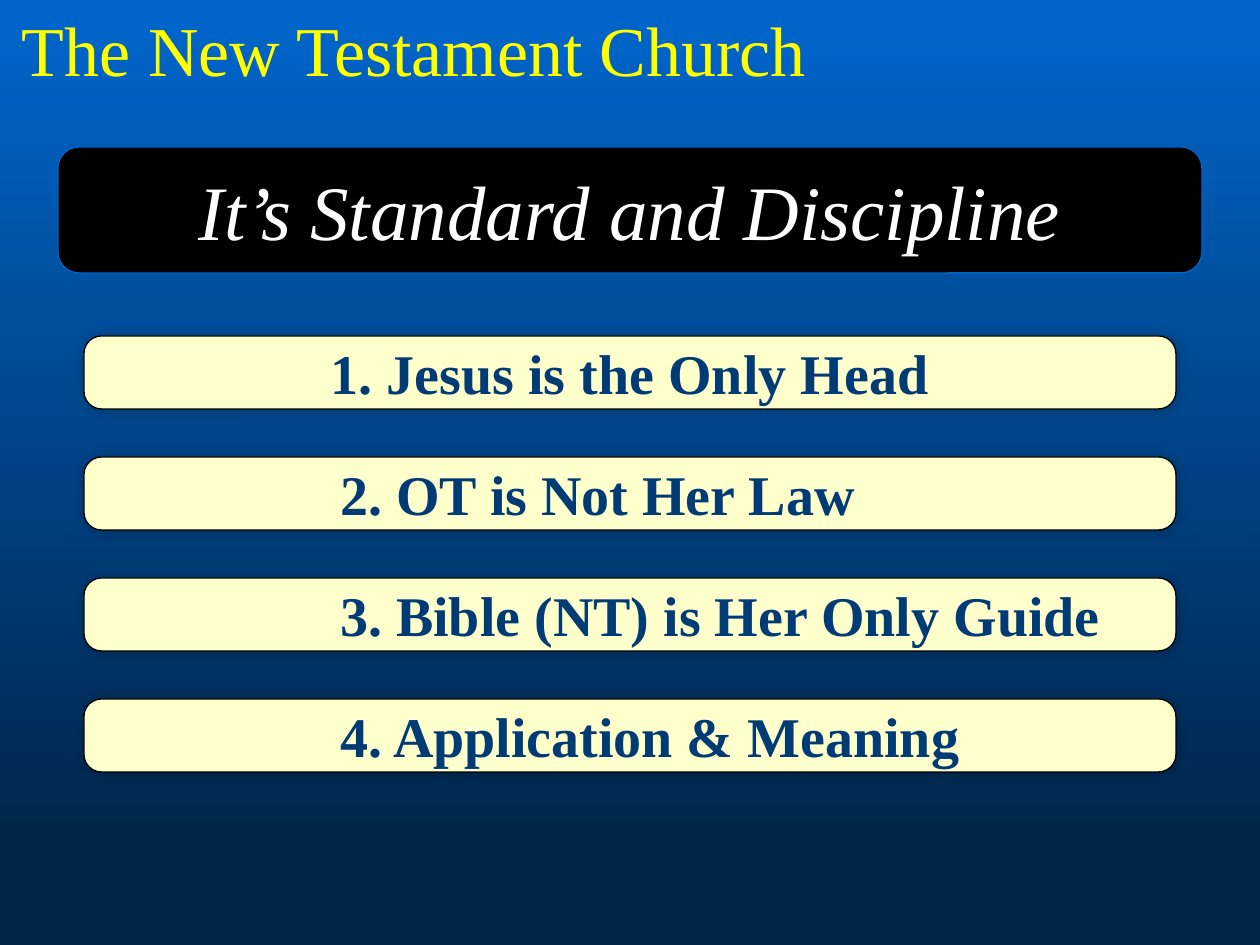
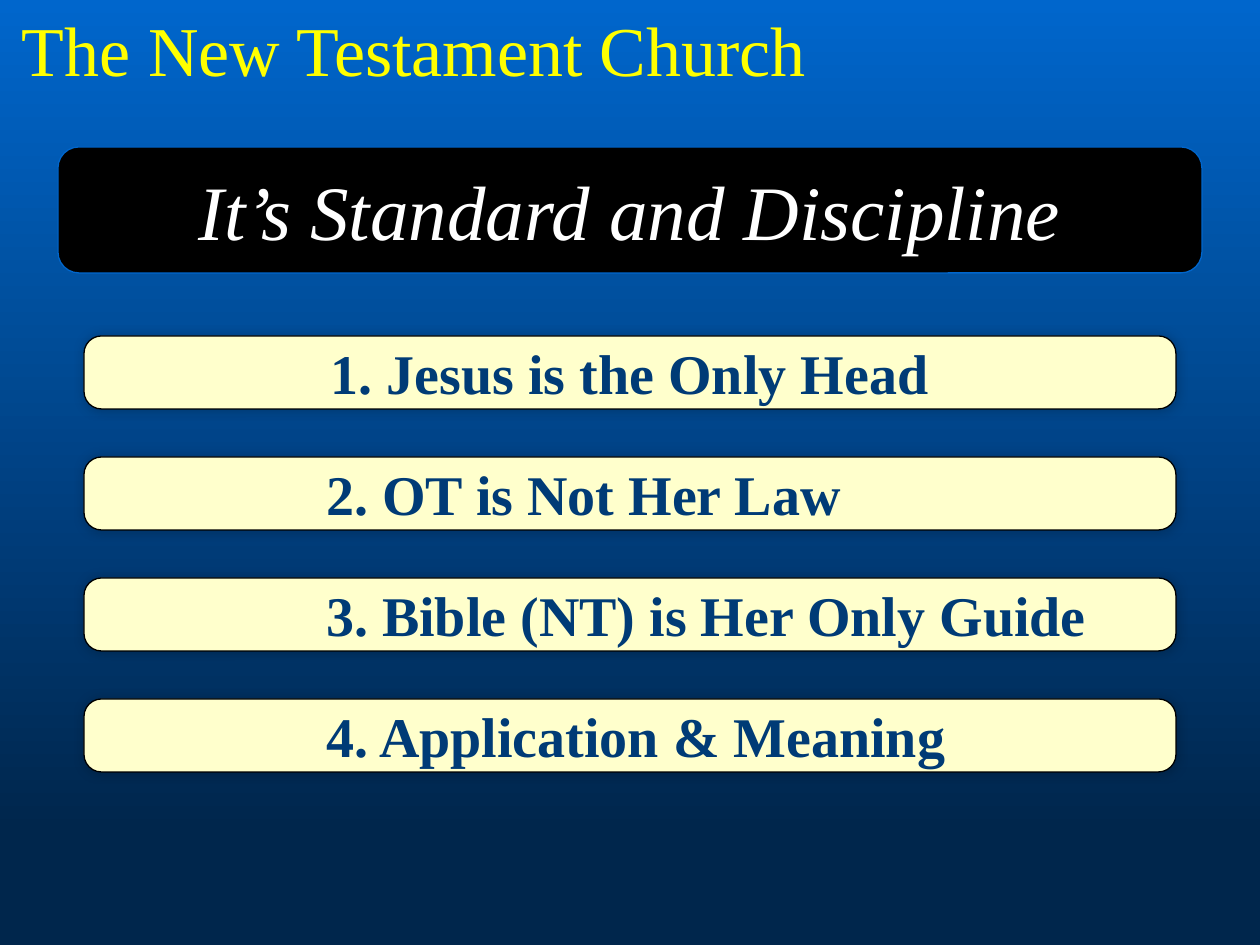
import pptx
import pptx.util
import pptx.dml.color
import pptx.enum.shapes
import pptx.enum.text
import pptx.oxml
import pptx.oxml.ns

RGB = pptx.dml.color.RGBColor
SKY = RGB(0x00, 0x66, 0xCC)
NIGHT = RGB(0x00, 0x26, 0x4C)
NAVY = RGB(0x00, 0x3B, 0x76)
CREAM = RGB(0xFF, 0xFF, 0xCC)
YELLOW = RGB(0xFF, 0xFF, 0x00)
WHITE = RGB(0xFF, 0xFF, 0xFF)
BLACK = RGB(0x00, 0x00, 0x00)

FONT = "Times New Roman"
PX_PER_INCH = 126
SLIDE_W, SLIDE_H = 1260, 945
TITLE_BOX = (5, 0, 818, 97)
BANNER_BOX = (58, 147, 1144, 126)
POINTS_BOX = (84, 336, 1092, 436)
BAR_H = 73
INSET = 13

TITLE = "The New Testament Church"
SUBTITLE = "It’s Standard and Discipline"
POINTS = [
    "1. Jesus is the Only Head",
    "2. OT is Not Her Law",
    "3. Bible (NT) is Her Only Guide",
    "4. Application & Meaning",
]
POINT_INDENTS = [238, 224]  # one per slide

SOFT_SHADOW = (
    f'<a:outerShdw {pptx.oxml.ns.nsdecls("a")} blurRad="76200" dist="0" dir="13500000">'
    '<a:srgbClr val="000000"><a:alpha val="20000"/></a:srgbClr></a:outerShdw>'
)


def px(n):
    return pptx.util.Emu(round(n * 914400 / PX_PER_INCH))


def write(sp, text, size, color, bold=False, italic=False, indent=None):
    """Set one line of text: centred, or left-aligned at an indent."""
    tf = sp.text_frame
    p = tf.paragraphs[0]
    p.text = text
    p.alignment = pptx.enum.text.PP_ALIGN.CENTER
    if indent is not None:
        p.alignment = pptx.enum.text.PP_ALIGN.LEFT
        tf.margin_left = px(INSET + indent)
    p.font.name = FONT
    p.font.size = pptx.util.Pt(size)
    p.font.bold = bold
    p.font.italic = italic
    p.font.color.rgb = color


def add_panel(slide, box, fill, line):
    """Rounded rectangle with a thin outline."""
    sp = slide.shapes.add_shape(
        pptx.enum.shapes.MSO_SHAPE.ROUNDED_RECTANGLE, *map(px, box))
    sp.shadow.inherit = False
    sp.fill.solid()
    sp.fill.fore_color.rgb = fill
    sp.line.color.rgb = line
    sp.line.width = pptx.util.Pt(0.75)
    sp.text_frame.word_wrap = True
    sp.text_frame.vertical_anchor = pptx.enum.text.MSO_ANCHOR.MIDDLE
    return sp


def paint_background(slide):
    fill = slide.background.fill
    fill.gradient()
    fill.gradient_angle = 270
    for stop, position, color in zip(fill.gradient_stops, (0, 0.88), (SKY, NIGHT)):
        stop.position = position
        stop.color.rgb = color


def add_title(slide, box):
    sp = slide.shapes.add_textbox(*map(px, box))
    sp.text_frame.word_wrap = False
    sp.text_frame.auto_size = pptx.enum.text.MSO_AUTO_SIZE.SHAPE_TO_FIT_TEXT
    write(sp, TITLE, 40, YELLOW)


def add_banner(slide, box):
    sp = add_panel(slide, box, BLACK, SKY)
    write(sp, SUBTITLE, 44, WHITE, italic=True)


def add_points(slide, box, indent):
    """Evenly spaced bars; the first is centred, the others share an indent."""
    x, y, w, h = box
    pitch = (h - BAR_H) / (len(POINTS) - 1)
    for i, text in enumerate(POINTS):
        sp = add_panel(slide, (x, y + i * pitch, w, BAR_H), CREAM, BLACK)
        sp.adjustments[0] = 0.24
        effects = sp._element.spPr.find(pptx.oxml.ns.qn("a:effectLst"))
        effects.append(pptx.oxml.parse_xml(SOFT_SHADOW))
        write(sp, text, 32, NAVY, bold=True, indent=indent if i else None)


def add_outline_slide(prs, indent):
    slide = prs.slides.add_slide(prs.slide_layouts[6])
    paint_background(slide)
    add_title(slide, TITLE_BOX)
    add_banner(slide, BANNER_BOX)
    add_points(slide, POINTS_BOX, indent)


def main():
    prs = pptx.Presentation()
    prs.slide_width, prs.slide_height = px(SLIDE_W), px(SLIDE_H)
    for indent in POINT_INDENTS:
        add_outline_slide(prs, indent)
    prs.save("out.pptx")


if __name__ == "__main__":
    main()
